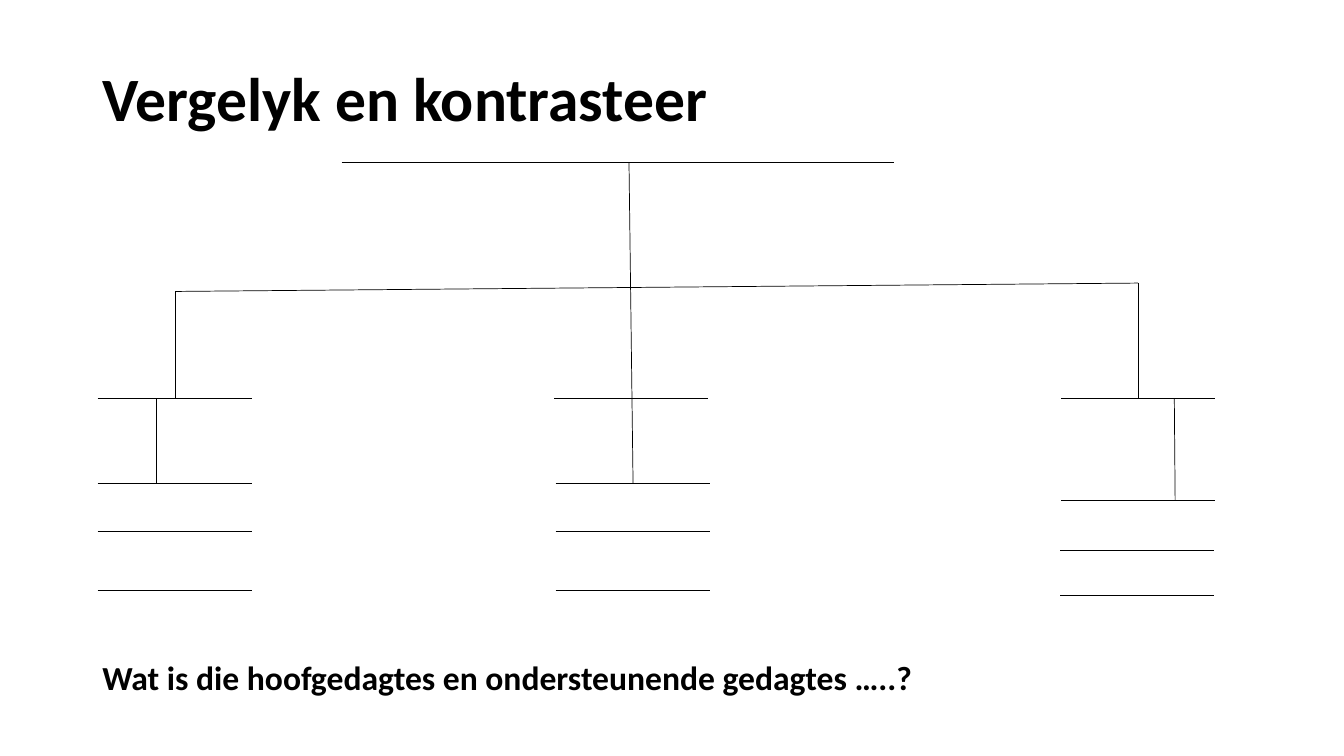
"""Build the compare-and-contrast slide with an empty tree diagram."""
from lxml import etree
from pptx import Presentation
from pptx.dml.color import RGBColor
from pptx.enum.shapes import MSO_CONNECTOR
from pptx.enum.text import MSO_ANCHOR, MSO_AUTO_SIZE, PP_ALIGN
from pptx.oxml.ns import qn
from pptx.util import Pt

STRAIGHT = MSO_CONNECTOR.STRAIGHT
MIDDLE, TOP = MSO_ANCHOR.MIDDLE, MSO_ANCHOR.TOP
LEFT = PP_ALIGN.LEFT
FIT_SHAPE, NO_FIT = MSO_AUTO_SIZE.SHAPE_TO_FIT_TEXT, MSO_AUTO_SIZE.NONE
COLORS = {"ink": "000000"}
FONT = "Calibri"


def write_text(shape, text, size, anchor=TOP, auto_size=NO_FIT, line_spacing=1.0):
    frame = shape.text_frame
    frame.word_wrap = True
    frame.auto_size = auto_size
    frame.vertical_anchor = anchor
    paragraph = frame.paragraphs[0]
    paragraph.alignment = LEFT
    paragraph.line_spacing = line_spacing
    run = paragraph.add_run()
    run.text = text
    run.font.name = FONT
    run.font.size = Pt(size)
    run.font.bold = True
    run.font.color.rgb = RGBColor.from_string(COLORS["ink"])


def draw_line(slide, x1, y1, x2, y2):
    line = slide.shapes.add_connector(STRAIGHT, Pt(x1), Pt(y1), Pt(x2), Pt(y2))
    line.line.color.rgb = RGBColor.from_string(COLORS["ink"])
    line.line.width = Pt(0.5)
    etree.SubElement(line._element.spPr, qn("a:effectLst"))


presentation = Presentation()
presentation.slide_width = Pt(960)
presentation.slide_height = Pt(540)
slide = presentation.slides.add_slide(presentation.slide_layouts[5])

title = slide.shapes.title
title.left, title.top, title.width, title.height = Pt(66), Pt(28.75), Pt(828), Pt(87)
write_text(title, "Vergelyk en kontrasteer", size=44, anchor=MIDDLE, line_spacing=0.9)

top_y, branch_y = 116, 284.4
left_x, left_y = 125.3, 208.2
right_x, right_y = 813, 202.2

tree_lines = [
    (244, top_y, 638.6, top_y),
    (449.3, top_y, 452.2, 345),
    (left_x, left_y, right_x, right_y),
    (left_x, left_y, left_x, branch_y),
    (right_x, right_y, right_x, branch_y),
    (111.6, branch_y, 111.6, 345),
    (838.8, branch_y, 839.4, 357.1),
]
for tree_line in tree_lines:
    draw_line(slide, *tree_line)

rule_width = 110
answer_columns = [
    [(69.8, branch_y), (69.8, 345), (69.8, 379.4), (69.8, 421.9)],
    [(396, branch_y), (396.9, 345), (396.9, 379.4), (396.9, 421.9)],
    [(758, branch_y), (758, 357.1), (757.3, 393.1), (757.3, 425)],
]
for column in answer_columns:
    for x, y in column:
        draw_line(slide, x, y, x + rule_width, y)

question = slide.shapes.add_textbox(Pt(66), Pt(466), Pt(664), Pt(36.35))
write_text(question, "Wat is die hoofgedagtes en ondersteunende gedagtes …..?",
           size=24, auto_size=FIT_SHAPE)

presentation.save("out.pptx")
